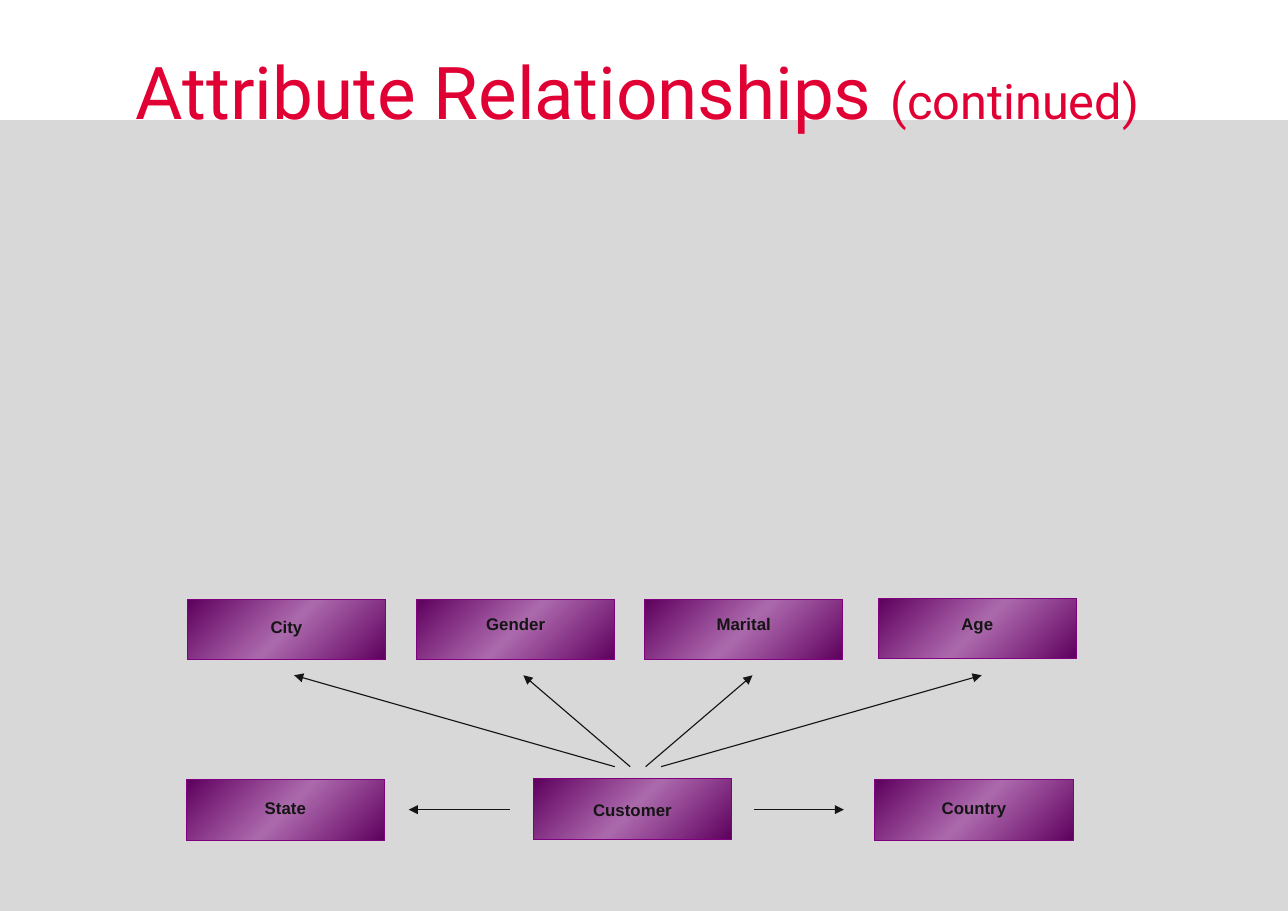
from dataclasses import dataclass

from lxml import etree
from pptx import Presentation
from pptx.dml.color import RGBColor
from pptx.enum.shapes import MSO_CONNECTOR, MSO_SHAPE
from pptx.enum.text import MSO_ANCHOR, MSO_AUTO_SIZE, PP_ALIGN
from pptx.oxml import parse_xml
from pptx.oxml.ns import nsdecls, qn
from pptx.util import Inches, Pt

RECT, STRAIGHT = MSO_SHAPE.RECTANGLE, MSO_CONNECTOR.STRAIGHT
MIDDLE, CENTER, RIGHT = MSO_ANCHOR.MIDDLE, PP_ALIGN.CENTER, PP_ALIGN.RIGHT
NO_FIT, GROW = MSO_AUTO_SIZE.NONE, MSO_AUTO_SIZE.SHAPE_TO_FIT_TEXT


@dataclass(frozen=True)
class Theme:
    panel: str = "D8D8D8"
    title: str = "E00034"
    ink: str = "151515"
    purple: str = "800080"
    dark_purple: str = "5C005C"
    title_font: str = "Roboto"
    label_font: str = "Arial"
    title_size: float = 47.6
    suffix_size: float = 31.8
    label_size: float = 11


THEME = Theme()
BOX_W, BOX_H = 1.8, 0.55
LABEL_W, LABEL_H, LABEL_DX = 1.52, 0.3, 0.14

GRADIENT = f"""<a:gradFill {nsdecls('a')} rotWithShape="1"><a:gsLst>
<a:gs pos="0"><a:srgbClr val="{THEME.dark_purple}"/></a:gs>
<a:gs pos="50000"><a:srgbClr val="{THEME.purple}"><a:alpha val="50000"/></a:srgbClr></a:gs>
<a:gs pos="100000"><a:srgbClr val="{THEME.dark_purple}"/></a:gs>
</a:gsLst><a:lin ang="2700000" scaled="0"/></a:gradFill>"""


def add_run(p, text, color, **font):
    r = p.add_run()
    r.text = text
    r.font.color.rgb = RGBColor.from_string(color)
    for name, value in font.items():
        setattr(r.font, name, value)


def add_arrow(x1, y1, x2, y2, width):
    line = slide.shapes.add_connector(
        STRAIGHT, Inches(x1), Inches(y1), Inches(x2), Inches(y2))
    line.line.color.rgb = RGBColor.from_string(THEME.ink)
    line.line.width = Pt(width)
    etree.SubElement(line.line._get_or_add_ln(), qn("a:tailEnd"), type="triangle")
    etree.SubElement(line._element.spPr, qn("a:effectLst"))


prs = Presentation()
prs.slide_width, prs.slide_height = Inches(11.69), Inches(8.27)
slide = prs.slides.add_slide(prs.slide_layouts[5])

# Grey panel behind everything
panel = slide.shapes.add_shape(RECT, 0, Inches(1.09), Inches(11.69), Inches(7.18))
panel.shadow.inherit = False
panel.fill.solid()
panel.fill.fore_color.rgb = RGBColor.from_string(THEME.panel)
panel.line.fill.background()
slide.shapes._spTree.insert(2, panel._element)

# Title
title = slide.shapes.title
title.left, title.top = Inches(0.33), Inches(0.28)
title.width, title.height = Inches(10.11), Inches(1.6)
tf = title.text_frame
tf.word_wrap, tf.auto_size, tf.vertical_anchor = True, NO_FIT, MIDDLE
tf.margin_bottom = Inches(0.57)
p = tf.paragraphs[0]
p.alignment = RIGHT
for text, size in (("Attribute Relationships ", THEME.title_size),
                   ("(continued)", THEME.suffix_size)):
    add_run(p, text, THEME.title, name=THEME.title_font, size=Pt(size))

# Attribute boxes: name, left, top, label offset from the top
attributes = [
    ("Customer", 4.84, 7.07, 0.13),
    ("City", 1.7, 5.44, 0.1),
    ("State", 1.69, 7.08, 0.1),
    ("Country", 7.94, 7.08, 0.1),
    ("Gender", 3.78, 5.44, 0.07),
    ("Marital", 5.85, 5.44, 0.07),
    ("Age", 7.97, 5.43, 0.08),
]
for name, left, top, label_dy in attributes:
    sp = slide.shapes.add_shape(
        RECT, Inches(left), Inches(top), Inches(BOX_W), Inches(BOX_H))
    sp.shadow.inherit = False
    sp._element.spPr.find(qn("a:prstGeom")).addnext(parse_xml(GRADIENT))
    sp.line.color.rgb = RGBColor.from_string(THEME.purple)
    sp.line.width = Pt(0.75)

    label = slide.shapes.add_textbox(
        Inches(left + LABEL_DX), Inches(top + label_dy), Inches(LABEL_W), Inches(LABEL_H))
    tf = label.text_frame
    tf.word_wrap, tf.auto_size, tf.vertical_anchor = True, GROW, MIDDLE
    tf.margin_left = tf.margin_right = Inches(0.11)
    tf.margin_top = tf.margin_bottom = Inches(0.06)
    p = tf.paragraphs[0]
    p.alignment = CENTER
    add_run(p, name, THEME.ink, name=THEME.label_font,
            size=Pt(THEME.label_size), bold=True)

# Arrows from Customer: a fan to the upper row, then one to each side
for i in range(4):
    add_arrow(5.58 + 0.14 * i, 6.96, 2.67 + 2.08 * i, 6.13, 0.75)
for start, end in ((4.63, 3.71), (6.84, 7.66)):
    add_arrow(start, 7.35, end, 7.35, 1)

prs.save("out.pptx")
